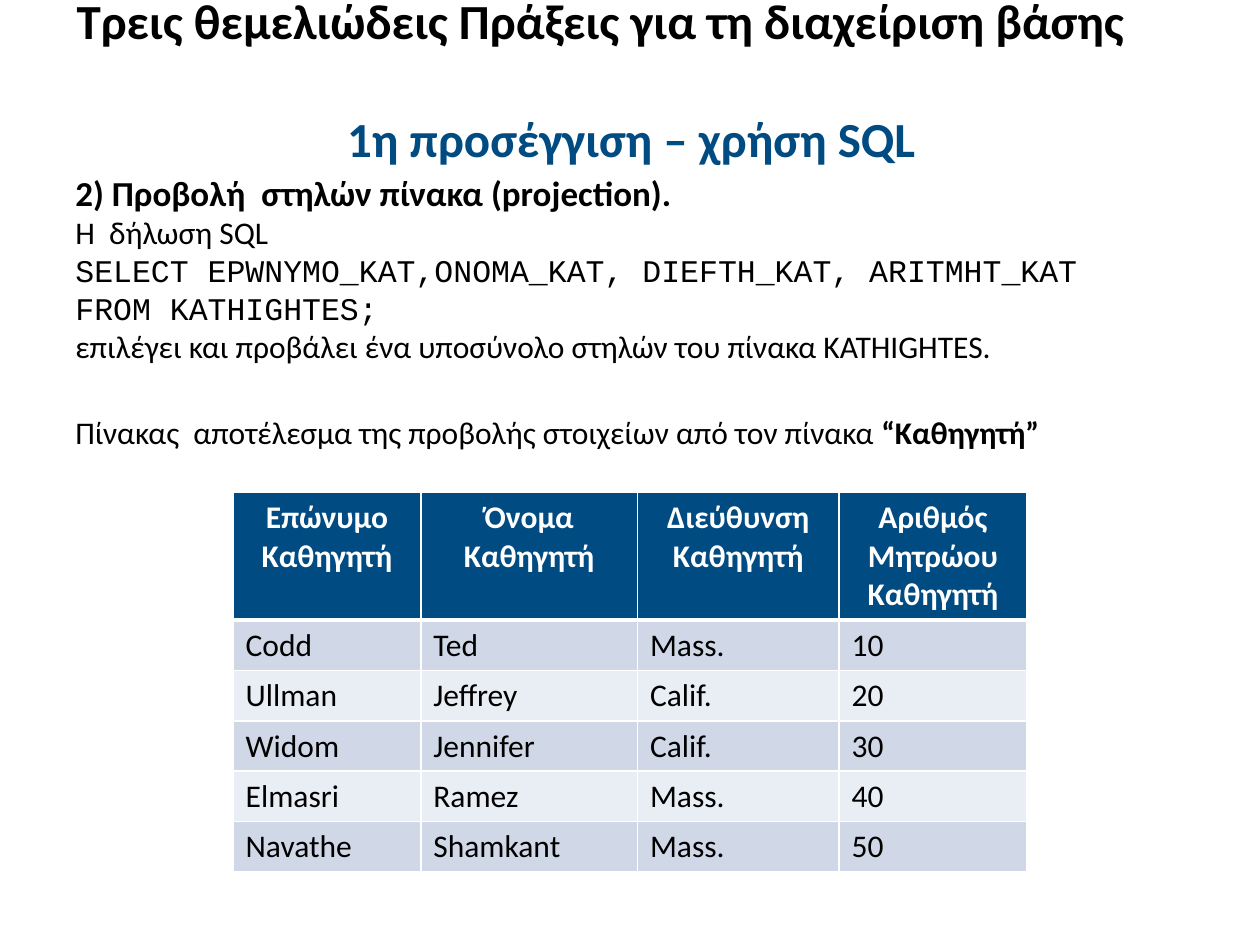
from lxml.etree import SubElement
from pptx import Presentation
from pptx.dml.color import RGBColor as RGB
from pptx.enum.text import MSO_ANCHOR as Anchor, PP_ALIGN as Align
from pptx.oxml.ns import qn
from pptx.util import Inches, Pt

COLORS = {"black": "000000", "white": "FFFFFF", "navy": "004B82",
          "odd": "D0D8E8", "even": "E9EDF4"}
SANS, MONO = "Calibri", "Courier New"

HEADING = [
    ("Τρεις θεμελιώδεις Πράξεις για τη διαχείριση βάσης", "black", Align.LEFT, 0),
    ("1η προσέγγιση – χρήση SQL", "navy", Align.CENTER, 34),
]
BODY = [
    ([("2) Προβολή  στηλών πίνακα (projection).", True)], SANS, 20, 0),
    ([("Η  δήλωση SQL", False)], SANS, 18, 0),
    ([("SELECT EPWNYMO_ΚΑΤ,ONOMA_ΚΑΤ, DIEFTH_KAT, ARITMHT_ΚΑΤ", False)], MONO, 18, 0),
    ([("FROM KATHIGHTES;", False)], MONO, 18, 0),
    ([("επιλέγει και προβάλει ένα υποσύνολο στηλών του πίνακα KATHIGHTES.", False)],
     SANS, 18, 0),
    ([("Πίνακας  αποτέλεσμα της προβολής στοιχείων από τον πίνακα ", False),
      ("“Καθηγητή”", True)], SANS, 18, 28),
]
PROFESSORS = [
    ("Επώνυμο Καθηγητή", "Όνομα Καθηγητή", "Διεύθυνση Καθηγητή",
     "Αριθμός Μητρώου Καθηγητή"),
    ("Codd", "Ted", "Mass.", "10"),
    ("Ullman", "Jeffrey", "Calif.", "20"),
    ("Widom", "Jennifer", "Calif.", "30"),
    ("Elmasri", "Ramez", "Mass.", "40"),
    ("Navathe", "Shamkant", "Mass.", "50"),
]
COLUMN_WIDTHS = [1.49, 1.72, 1.6, 1.49]
ROW_HEIGHTS = [1.01] + [0.4] * (len(PROFESSORS) - 1)


def color(name):
    return RGB.from_string(COLORS[name])


def add_text_frame(slide, left, top, width, height, anchor):
    frame = slide.shapes.add_textbox(*map(Inches, (left, top, width, height))).text_frame
    frame.word_wrap = True
    frame.vertical_anchor = anchor
    return frame


def write(paragraph, runs, size, ink, face=SANS, align=Align.LEFT, before=0):
    paragraph.alignment = align
    paragraph.space_before = Pt(before)
    font = paragraph.font
    font.name, font.size, font.color.rgb = face, Pt(size), color(ink)
    font.bold = runs[0][1]
    for text, bold in runs:
        run = paragraph.add_run()
        run.text = text
        if bold != font.bold:
            run.font.bold = bold


def next_paragraph(frame, index):
    return frame.add_paragraph() if index else frame.paragraphs[0]


def set_borders(cell, top, bottom):
    properties = cell._tc.get_or_add_tcPr()
    for side, points in (("L", 1), ("R", 1), ("T", top), ("B", bottom)):
        line = SubElement(properties, qn(f"a:ln{side}"), w=str(Pt(points)))
        SubElement(SubElement(line, qn("a:solidFill")), qn("a:srgbClr"),
                   val=COLORS["white"])


def add_professors(slide):
    table = slide.shapes.add_table(
        len(PROFESSORS), len(COLUMN_WIDTHS), Inches(1.85), Inches(3.91),
        Inches(sum(COLUMN_WIDTHS)), Inches(sum(ROW_HEIGHTS))).table
    for column, width in zip(table.columns, COLUMN_WIDTHS):
        column.width = Inches(width)
    for r, values in enumerate(PROFESSORS):
        table.rows[r].height = Inches(ROW_HEIGHTS[r])
        header = r == 0
        shade = "navy" if header else "odd" if r % 2 else "even"
        for c, value in enumerate(values):
            cell = table.cell(r, c)
            set_borders(cell, 3 if r == 1 else 1, 3 if header else 1)
            cell.fill.solid()
            cell.fill.fore_color.rgb = color(shade)
            write(cell.text_frame.paragraphs[0], [(value, header)], 18,
                  "white" if header else "black",
                  align=Align.CENTER if header else Align.LEFT)


def main():
    deck = Presentation()
    deck.slide_width, deck.slide_height = Inches(10), Inches(7.5)
    slide = deck.slides.add_slide(deck.slide_layouts[6])

    heading = add_text_frame(slide, 0.51, 0.13, 9, 0.99, Anchor.MIDDLE)
    for i, (text, ink, align, before) in enumerate(HEADING):
        write(next_paragraph(heading, i), [(text, True)], 28, ink,
              align=align, before=before)

    body = add_text_frame(slide, 0.5, 1.31, 9, 5.51, Anchor.TOP)
    for i, (runs, face, size, before) in enumerate(BODY):
        write(next_paragraph(body, i), runs, size, "black", face, before=before)

    add_professors(slide)
    deck.save("out.pptx")


if __name__ == "__main__":
    main()
